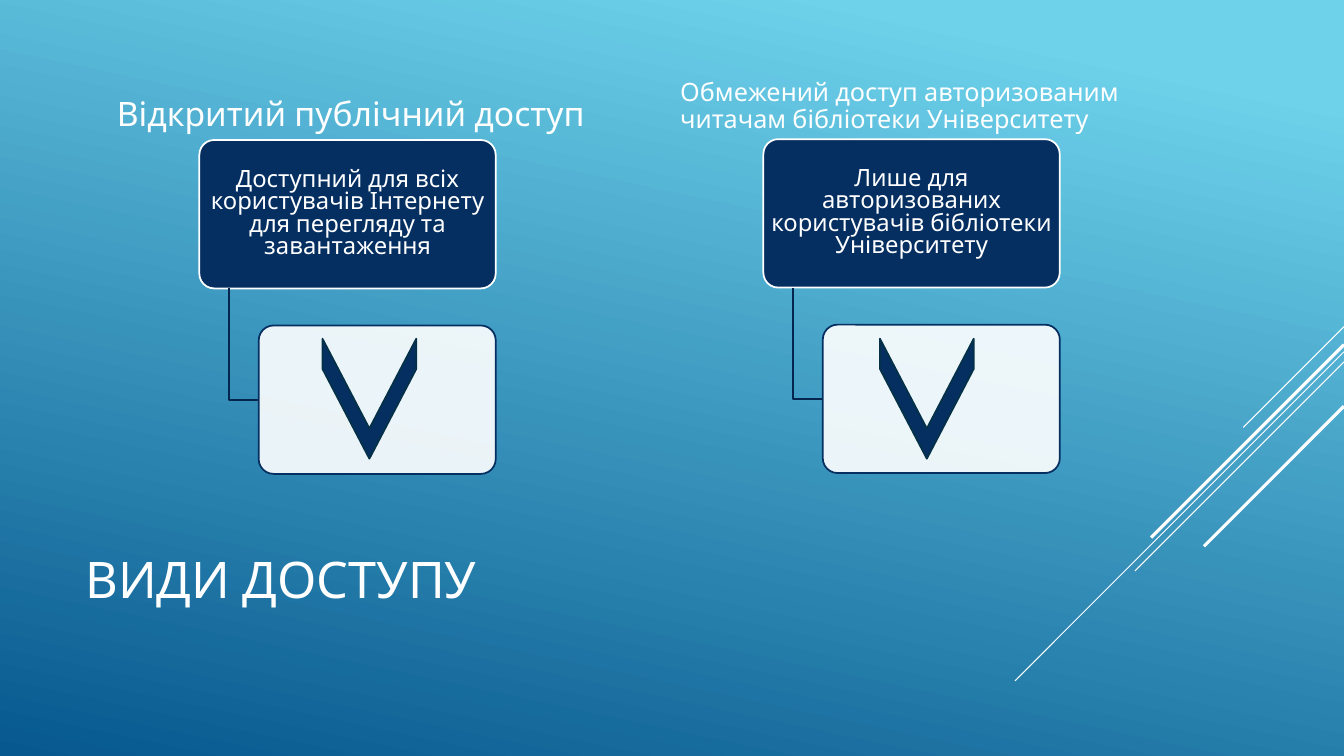
from lxml import etree
from pptx import Presentation
from pptx.dml.color import RGBColor
from pptx.enum.shapes import MSO_CONNECTOR, MSO_SHAPE
from pptx.enum.text import MSO_ANCHOR, PP_ALIGN
from pptx.oxml.ns import qn
from pptx.util import Pt

LINE = MSO_CONNECTOR.STRAIGHT
ROUNDED, CHEVRON = MSO_SHAPE.ROUNDED_RECTANGLE, MSO_SHAPE.CHEVRON
MIDDLE, BOTTOM = MSO_ANCHOR.MIDDLE, MSO_ANCHOR.BOTTOM
LEFT, CENTER = PP_ALIGN.LEFT, PP_ALIGN.CENTER

THEME = {
    "font": "League Spartan",
    "white": RGBColor(0xFF, 0xFF, 0xFF),
    "navy": RGBColor(0x05, 0x2F, 0x61),
    "elbow": RGBColor(0x04, 0x26, 0x4E),
    "chevron_line": RGBColor(0x04, 0x31, 0x48),
    "sky": RGBColor(0x6E, 0xD2, 0xEB),
    "deep": RGBColor(0x06, 0x58, 0x8E),
    "title": 36,
    "box": 17,
    "outline": 1.25,
}


def style(sp, fill, line):
    sp.shadow.inherit = False
    if fill is None:
        sp.fill.background()
    else:
        sp.fill.solid()
        sp.fill.fore_color.rgb = fill
    sp.line.color.rgb = line
    sp.line.width = Pt(THEME["outline"])


def write(sp, text, size, anchor, align=LEFT, spacing=1.0):
    tf = sp.text_frame
    tf.word_wrap = True
    tf.vertical_anchor = anchor
    p = tf.paragraphs[0]
    p.alignment = align
    p.line_spacing = spacing
    r = p.add_run()
    r.text = text
    r.font.name = THEME["font"]
    r.font.size = Pt(size)
    r.font.color.rgb = THEME["white"]
    return tf


prs = Presentation()
prs.slide_width, prs.slide_height = Pt(960), Pt(540)
s = prs.slides.add_slide(prs.slide_layouts[6])

# Background gradient
bg = s.background.fill
bg.gradient()
bg.gradient_angle = 258
for stop, color, position in zip(bg.gradient_stops, ("sky", "deep"), (0.1, 1.0)):
    stop.color.rgb = THEME[color]
    stop.position = position

# Diagonal lines running off the right edge: start y, run, width
for y, run, width in [(233.3, 72, 0.75), (251.3, 235, 0.75), (258.5, 149.3, 0.75),
                      (246.2, 137.7, 2.25), (290.2, 100, 2.25)]:
    line = s.shapes.add_connector(LINE, Pt(960), Pt(y), Pt(960 - run), Pt(y + run))
    line.line.color.rgb = THEME["white"]
    line.line.width = Pt(width)
    etree.SubElement(line._element.spPr, qn("a:effectLst"))

# Title
title = s.shapes.add_textbox(Pt(54), Pt(353.5), Pt(672), Pt(119))
write(title, "ВИДИ ДОСТУПУ", THEME["title"], MIDDLE)

# Access kinds: heading, its size and left; box text, left and top; chevron left
ACCESS = [
    ("Відкритий публічний доступ", 24, 76.3,
     "Доступний для всіх користувачів Інтернету для перегляду та завантаження",
     142.4, 100, 221),
    ("Обмежений доступ авторизованим читачам бібліотеки Університету", 18, 478.8,
     "Лише для авторизованих користувачів бібліотеки Університету",
     545.3, 99.4, 619.2),
]
BOX_W, BOX_H = 211.7, 106
CHILD_DX, CHILD_DY = 42.4, 132.5
ELBOW_DX = CHILD_DX / 2

for heading, size, heading_x, text, x, y, chevron_x in ACCESS:
    sp = s.shapes.add_textbox(Pt(heading_x), Pt(54), Pt(367), Pt(45.4))
    write(sp, heading, size, BOTTOM, spacing=0.9)

    # Description box
    sp = s.shapes.add_shape(ROUNDED, Pt(x), Pt(y), Pt(BOX_W), Pt(BOX_H))
    sp.adjustments[0] = 0.1
    style(sp, THEME["navy"], THEME["white"])
    tf = write(sp, text, THEME["box"], MIDDLE, CENTER, 0.79)
    tf.margin_left = tf.margin_right = Pt(2)
    tf.margin_top = tf.margin_bottom = Pt(2)

    # Elbow down to the middle of the lower box
    middle = y + CHILD_DY + BOX_H / 2
    elbow = s.shapes.build_freeform(Pt(x + ELBOW_DX), Pt(y + BOX_H))
    elbow.add_line_segments([(Pt(x + ELBOW_DX), Pt(middle)),
                             (Pt(x + CHILD_DX), Pt(middle))], close=False)
    style(elbow.convert_to_shape(), None, THEME["elbow"])

    # Lower box, slightly transparent
    sp = s.shapes.add_shape(ROUNDED, Pt(x + CHILD_DX), Pt(y + CHILD_DY),
                            Pt(BOX_W - CHILD_DX), Pt(BOX_H))
    sp.adjustments[0] = 0.1
    style(sp, THEME["white"], THEME["navy"])
    color = sp._element.spPr.find(qn("a:solidFill")).find(qn("a:srgbClr"))
    etree.SubElement(color, qn("a:alpha"), val="90000")

    # Chevron mark
    sp = s.shapes.add_shape(CHEVRON, Pt(chevron_x), Pt(251.3), Pt(85.7), Pt(67))
    sp.adjustments[0] = 0.957
    sp.rotation = 90
    style(sp, THEME["navy"], THEME["chevron_line"])

prs.save("out.pptx")
